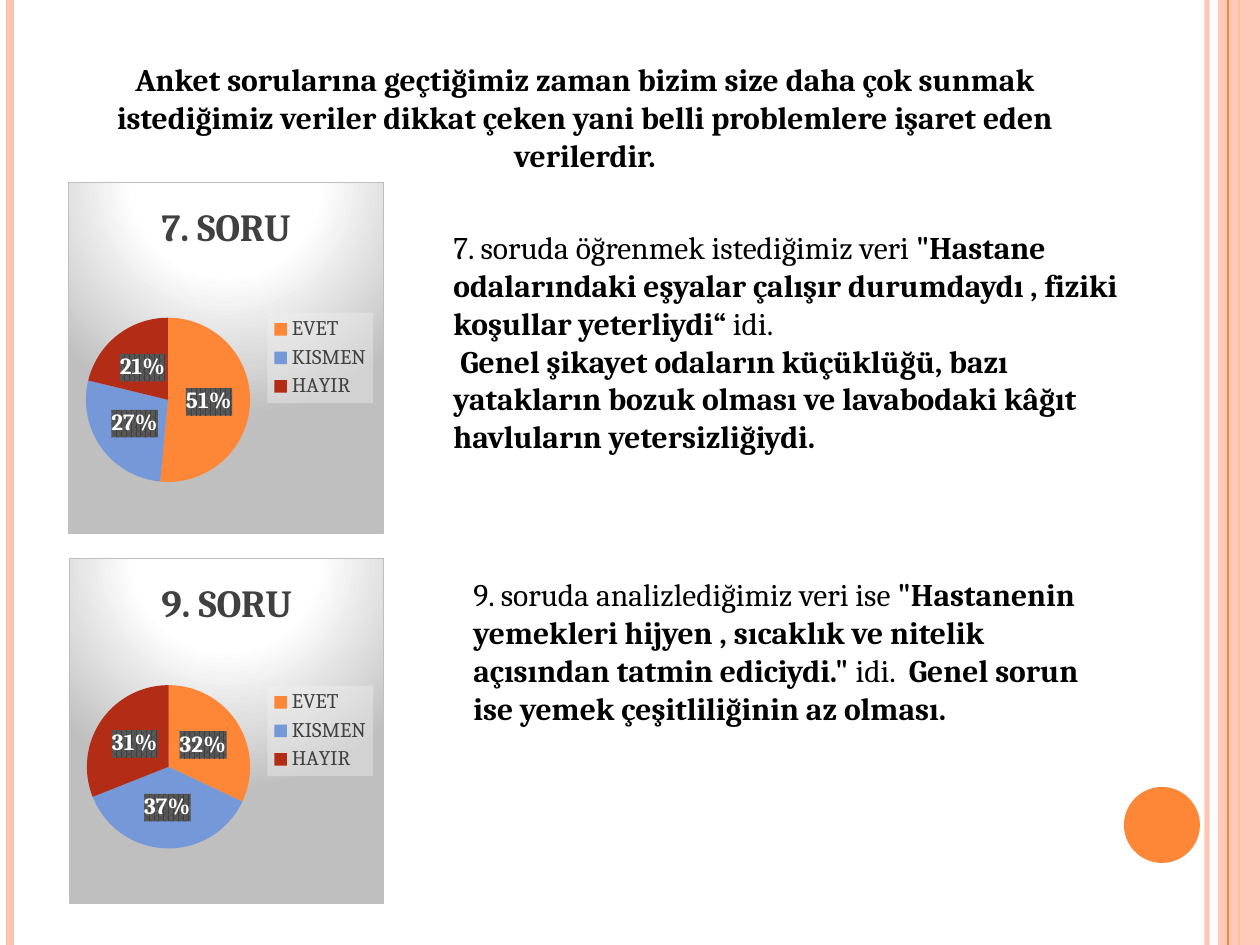
from dataclasses import dataclass

from pptx import Presentation
from pptx.chart.data import CategoryChartData
from pptx.dml.color import RGBColor
from pptx.enum.chart import XL_CHART_TYPE, XL_LABEL_POSITION, XL_LEGEND_POSITION
from pptx.enum.shapes import MSO_CONNECTOR, MSO_SHAPE
from pptx.enum.text import MSO_ANCHOR, PP_ALIGN
from pptx.oxml import parse_xml
from pptx.oxml.ns import nsdecls, qn
from pptx.util import Pt

PX = 914400 / 126


@dataclass
class Theme:
    """Colours, type sizes and font of the slide."""
    font: str = "Cambria"
    ink: str = "000000"
    soft: str = "404040"
    white: str = "FFFFFF"
    grey: str = "BFBFBF"
    peach: str = "FEC3AE"
    orange: str = "FE8637"
    slices: tuple = ("FE8637", "7598D9", "B32C16")
    body: float = 18
    head: float = 22
    key: float = 12
    label: float = 13.3
    chart: float = 10


def box(*sizes):
    """Turn pixel lengths into EMU."""
    return [round(size * PX) for size in sizes]


def fade(item, alpha):
    """Set the opacity, in percent, of the colours of an item."""
    for color in item.element.iter(qn("a:srgbClr")):
        color.append(parse_xml(f'<a:alpha {nsdecls("a")} val="{alpha * 1000}"/>'))


def props(inner):
    """Make a chart spPr element around the given fill and line."""
    return parse_xml(f'<c:spPr {nsdecls("c", "a")}>{inner}</c:spPr>')


def solid(color, alpha=100):
    """Give the XML of a solid fill."""
    return (f'<a:solidFill><a:srgbClr val="{color}"><a:alpha val="{alpha * 1000}"/>'
            "</a:srgbClr></a:solidFill>")


class Deck:
    """Holds the style and the current slide."""

    def __init__(self, show, theme):
        """Add a title-only slide."""
        self.theme = theme
        self.slide = show.slides.add_slide(show.slide_layouts[5])

    def style(self, font, size, color, bold=False):
        """Format a font."""
        font.name, font.size, font.bold = self.theme.font, Pt(size), bold
        font.color.rgb = RGBColor.from_string(color)

    def title(self, text, *place):
        """Fill and move the title placeholder."""
        item = self.slide.shapes.title
        item.left, item.top, item.width, item.height = box(*place)
        frame = item.text_frame
        frame.text = text
        frame.word_wrap = True
        frame.vertical_anchor = MSO_ANCHOR.TOP
        para = frame.paragraphs[0]
        para.alignment = PP_ALIGN.CENTER
        self.style(para.runs[0].font, self.theme.body, self.theme.ink, True)

    def rule(self, x, color, width, alpha=100):
        """Draw a full-height vertical line."""
        ends = box(x, 0, x, 945)
        line = self.slide.shapes.add_connector(MSO_CONNECTOR.STRAIGHT, *ends)
        line.line.color.rgb = RGBColor.from_string(color)
        line.line.width = Pt(width)
        fade(line, alpha)
        line.element.spPr.append(parse_xml(f'<a:effectLst {nsdecls("a")}/>'))

    def shape(self, kind, color, *place, alpha=100):
        """Draw a filled shape with no outline."""
        item = self.slide.shapes.add_shape(kind, *box(*place))
        item.shadow.inherit = False
        item.fill.solid()
        item.fill.fore_color.rgb = RGBColor.from_string(color)
        item.line.fill.background()
        fade(item, alpha)

    def text(self, paras, *place):
        """Write paragraphs of (text, bold) runs."""
        frame = self.slide.shapes.add_textbox(*box(*place)).text_frame
        frame.word_wrap = True
        for i, parts in enumerate(paras):
            para = frame.add_paragraph() if i else frame.paragraphs[0]
            for words, bold in parts:
                run = para.add_run()
                run.text = words
                self.style(run.font, self.theme.body, self.theme.ink, bold)

    def pie(self, name, values, *place):
        """Draw a pie chart with title, legend and labels."""
        theme = self.theme
        data = CategoryChartData()
        data.categories = ["EVET", "KISMEN", "HAYIR"]
        data.add_series(name, values)
        chart = self.slide.shapes.add_chart(XL_CHART_TYPE.PIE, *box(*place), data).chart
        self.style(chart.font, theme.chart, theme.ink)
        frame = chart.chart_title.text_frame
        frame.text = name
        self.style(frame.paragraphs[0].runs[0].font, theme.head, theme.soft, True)
        chart.chart_title.include_in_layout = False

        chart.has_legend = True
        legend = chart.legend
        legend.position = XL_LEGEND_POSITION.RIGHT
        legend.include_in_layout = False
        self.style(legend.font, theme.key, theme.soft)
        legend.font.fill.solid()
        legend.font.fill.fore_color.rgb = RGBColor.from_string(theme.soft)
        back = props(solid("F2F2F2", 39))
        legend._element.find(qn("c:txPr")).addprevious(back)

        plot = chart.plots[0]
        plot.vary_by_categories = True
        for i, color in enumerate(theme.slices):
            fill = plot.series[0].points[i].format.fill
            fill.solid()
            fill.fore_color.rgb = RGBColor.from_string(color)
        labels = plot.series[0].data_labels
        labels.show_value = True
        labels.number_format = '0"%"'
        labels.number_format_is_linked = False
        labels.position = XL_LABEL_POSITION.CENTER
        self.style(labels.font, theme.label, theme.white, True)
        back = props('<a:pattFill prst="pct75"><a:fgClr><a:srgbClr val="404040"/></a:fgClr>'
                     '<a:bgClr><a:srgbClr val="595959"/></a:bgClr></a:pattFill>')
        labels._element.find(qn("c:txPr")).addprevious(back)

        stops = ((0, theme.white), (39, theme.white), (100, theme.grey))
        marks = "".join(f'<a:gs pos="{at * 1000}"><a:srgbClr val="{color}"/></a:gs>'
                        for at, color in stops)
        back = props(f'<a:gradFill><a:gsLst>{marks}</a:gsLst><a:path path="circle">'
                     '<a:fillToRect l="50000" t="-80000" r="50000" b="180000"/></a:path>'
                     f'</a:gradFill><a:ln w="9525">{solid(theme.grey)}</a:ln>')
        chart._chartSpace.find(qn("c:txPr")).addprevious(back)


def main():
    """Build the survey slide."""
    show = Presentation()
    show.slide_width, show.slide_height = box(1260, 945)
    theme = Theme()
    deck = Deck(show, theme)

    deck.rule(1207, theme.peach, 3, 93)
    deck.rule(10, theme.peach, 4.5)
    deck.rule(1239, theme.orange, 1.5)
    deck.shape(MSO_SHAPE.RECTANGLE, theme.peach, 1218, 0, 42, 945, alpha=87)
    deck.rule(1228, theme.orange, 0.75)
    deck.shape(MSO_SHAPE.OVAL, theme.orange, 1124, 787, 76, 76)

    deck.title("Anket sorularına geçtiğimiz zaman bizim size daha çok sunmak istediğimiz "
               "veriler dikkat çeken yani belli problemlere işaret eden verilerdir.",
               97, 54, 976, 127)
    deck.pie("7. SORU", (51, 27, 21), 68, 182, 316, 352)
    deck.text([
        [("7. soruda öğrenmek istediğimiz veri ", False),
         ('"Hastane odalarındaki eşyalar çalışır durumdaydı , fiziki koşullar yeterliydi“',
          True),
         (" idi.", False)],
        [(" Genel şikayet odaların küçüklüğü, bazı yatakların bozuk olması ve lavabodaki "
          "kâğıt havluların yetersizliğiydi.", True)],
    ], 441, 222, 693, 242)
    deck.pie("9. SORU", (32, 37, 31), 69, 558, 315, 346)
    deck.text([
        [("9. soruda analizlediğimiz veri ise", False),
         (' "Hastanenin yemekleri hijyen , sıcaklık ve nitelik açısından tatmin ediciydi." ',
          True),
         ("idi.  ", False),
         ("Genel sorun ise yemek çeşitliliğinin az olması.", True)],
    ], 461, 569, 630, 165)
    show.save("out.pptx")


if __name__ == "__main__":
    main()
